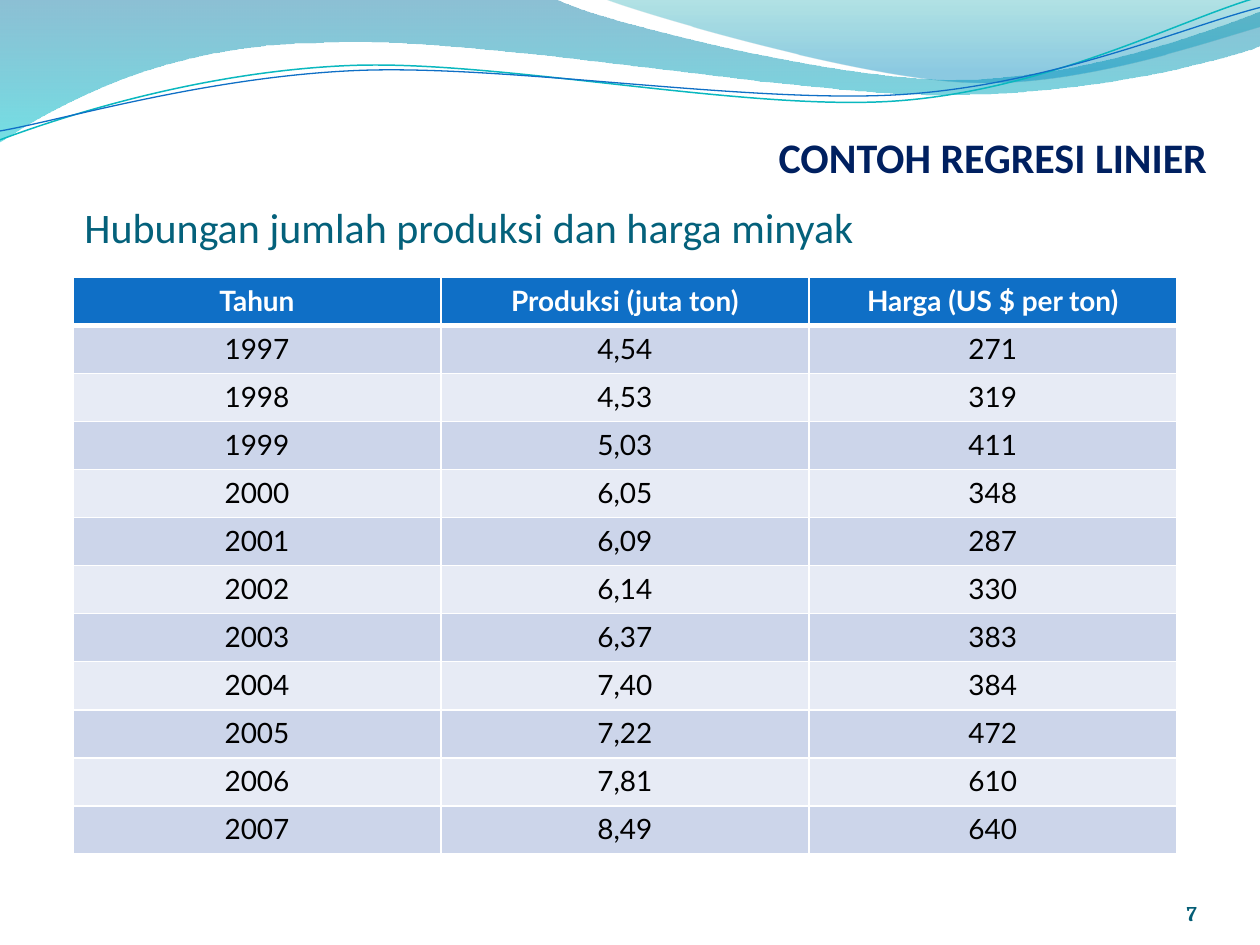
from dataclasses import dataclass
from math import cos, radians, sin

from lxml.etree import SubElement
from pptx import Presentation
from pptx.dml.color import RGBColor
from pptx.enum.text import MSO_ANCHOR, PP_ALIGN
from pptx.oxml import parse_xml
from pptx.oxml.ns import nsdecls, qn
from pptx.util import Inches, Pt


@dataclass(frozen=True)
class Theme:
    heading: str = "002060"
    subtitle: str = "04617B"
    number: str = "045D75"
    header: str = "0F6FC6"
    bands: tuple = ("CCD5EA", "E7EBF5")
    white: str = "FFFFFF"
    black: str = "000000"
    teal_line: str = "0AB8BF"
    back_wave: tuple = ((0, "0074A1", 45), (1, "00C6CF", 55))
    front_wave: tuple = ((0, "00A1A9", 30), (0.8, "008BBF", 45))
    heading_size: int = 24
    table_size: int = 16
    number_size: int = 12
    text_font: str = "Calibri"
    table_font: str = "Lato"
    number_font: str = "Cambria"


def turn(point, center, degrees):
    angle = radians(degrees)
    x, y = point[0] - center[0], point[1] - center[1]
    return (center[0] + x * cos(angle) - y * sin(angle),
            center[1] + x * sin(angle) + y * cos(angle))


class SlideBuilder:
    def __init__(self, slide, theme):
        self.slide = slide
        self.theme = theme

    def outline(self, start, segments, closed, tilt=0, center=(0, 0)):
        points = [start]
        for segment in segments:
            points.extend(zip(segment[::2], segment[1::2]))
        corners = [tuple(map(Inches, turn(point, center, -tilt))) for point in points]
        pen = self.slide.shapes.build_freeform(*corners[0])
        pen.add_line_segments(corners[1:], close=closed)
        shape = pen.convert_to_shape()
        shape.shadow.inherit = False
        shape.rotation = tilt
        steps = iter(list(shape.element.iter(qn("a:lnTo"))))
        for segment in segments:
            step = next(steps)
            if len(segment) == 6:
                step.tag = qn("a:cubicBezTo")
                for extra in (next(steps), next(steps)):
                    step.append(extra[0])
                    extra.getparent().remove(extra)
        return shape

    def wave(self, start, segments, stops):
        shape = self.outline(start, segments, True)
        shape.line.fill.background()
        shape.fill.gradient()
        shape.fill.gradient_angle = 270
        for stop, (position, color, _) in zip(shape.fill.gradient_stops, stops):
            stop.position = position
            stop.color.rgb = RGBColor.from_string(color)
        colors = shape.element.spPr.iter(qn("a:srgbClr"))
        for color, (_, _, opacity) in zip(colors, stops):
            SubElement(color, qn("a:alpha"), val=str(opacity * 1000))

    def curve(self, start, segments, center, color, width):
        shape = self.outline(start, segments, False, -2.7, center)
        shape.fill.background()
        shape.line.color.rgb = RGBColor.from_string(color)
        shape.line.width = Pt(width)

    def style(self, paragraph, font, size, color, align, bold=False):
        paragraph.alignment = align
        paragraph.font.name = font
        paragraph.font.size = Pt(size)
        paragraph.font.bold = bold
        paragraph.font.color.rgb = RGBColor.from_string(color)

    def text(self, words, box, top_inset, *style):
        frame = self.slide.shapes.add_textbox(*map(Inches, box)).text_frame
        frame.word_wrap = True
        frame.vertical_anchor = MSO_ANCHOR.BOTTOM
        frame.margin_left = frame.margin_right = frame.margin_bottom = 0
        frame.margin_top = Inches(top_inset)
        frame.text = words
        self.style(frame.paragraphs[0], *style)

    def borders(self, cell, top, bottom):
        properties = cell._tc.get_or_add_tcPr()
        for index, (side, width) in enumerate(zip("LRTB", (1, 1, top, bottom))):
            properties.insert(index, parse_xml(
                f'<a:ln{side} {nsdecls("a")} w="{Pt(width)}"><a:solidFill>'
                f'<a:srgbClr val="{self.theme.white}"/></a:solidFill></a:ln{side}>'))

    def table(self, rows, box):
        theme = self.theme
        grid = self.slide.shapes.add_table(
            len(rows), len(rows[0]), *map(Inches, box)).table
        for r, values in enumerate(rows):
            is_header = r == 0
            fill = theme.header if is_header else theme.bands[(r - 1) % 2]
            color = theme.white if is_header else theme.black
            for c, value in enumerate(values):
                cell = grid.cell(r, c)
                cell.text = value
                cell.fill.solid()
                cell.fill.fore_color.rgb = RGBColor.from_string(fill)
                self.style(cell.text_frame.paragraphs[0], theme.table_font,
                           theme.table_size, color, PP_ALIGN.CENTER, is_header)
                self.borders(cell, 3 if r == 1 else 1, 3 if is_header else 1)


OIL_ROWS = [
    ("Tahun", "Produksi (juta ton)", "Harga (US $ per ton)"),
    ("1997", "4,54", "271"),
    ("1998", "4,53", "319"),
    ("1999", "5,03", "411"),
    ("2000", "6,05", "348"),
    ("2001", "6,09", "287"),
    ("2002", "6,14", "330"),
    ("2003", "6,37", "383"),
    ("2004", "7,40", "384"),
    ("2005", "7,22", "472"),
    ("2006", "7,81", "610"),
    ("2007", "8,49", "640"),
]


def main():
    deck = Presentation()
    deck.slide_width, deck.slide_height = Inches(10), Inches(7.5)
    theme = Theme()
    page = SlideBuilder(deck.slides.add_slide(deck.slide_layouts[6]), theme)

    page.wave((0, -0.01), [
        (4.4, -0.01),
        (4.76, 0.17, 6.64, 0.63, 7.58, 0.63),
        (8.53, 0.63, 9.58, 0.26, 10, 0.09),
        (10.01, 0.36),
        (9.83, 0.44, 8.7, 0.76, 7.46, 0.75),
        (6.22, 0.75, 3.82, 0.28, 2.57, 0.34),
        (1.29, 0.35, 0.46, 0.83, -0.01, 1.13),
    ], theme.back_wave)
    page.wave((4.79, -0.01), [
        (5.09, 0.11, 6.82, 0.62, 7.69, 0.65),
        (8.56, 0.69, 9.61, 0.32, 10, 0.21),
        (10, 0),
    ], theme.front_wave)
    page.curve((0, 1.11), [
        (0.48, 0.93, 1.58, 0.57, 2.77, 0.52),
        (3.95, 0.47, 5.93, 0.89, 7.13, 0.8),
        (8.33, 0.71, 9.38, 0.15, 9.98, -0.02),
    ], (4.99, 0.58), theme.teal_line, 0.85)
    page.curve((0, 1.04), [
        (0.47, 0.96, 1.64, 0.61, 2.83, 0.56),
        (4.03, 0.51, 5.97, 0.83, 7.17, 0.75),
        (8.36, 0.67, 9.41, 0.21, 10, 0.06),
    ], (5, 0.59), theme.header, 0.75)

    page.text("CONTOH REGRESI LINIER", (0.5, 0.84, 9.08, 0.6), 0.05,
              theme.text_font, theme.heading_size, theme.heading, PP_ALIGN.RIGHT, True)
    page.text("7", (8.67, 6.95, 0.83, 0.4), 0,
              theme.number_font, theme.number_size, theme.number, PP_ALIGN.RIGHT, True)
    page.table(OIL_ROWS, (0.58, 2.2, 8.76, 4.58))
    page.text("Hubungan jumlah produksi dan harga minyak", (0.67, 0.75, 9.08, 1.25), 0.05,
              theme.text_font, theme.heading_size, theme.subtitle, PP_ALIGN.LEFT)

    deck.save("out.pptx")


if __name__ == "__main__":
    main()
